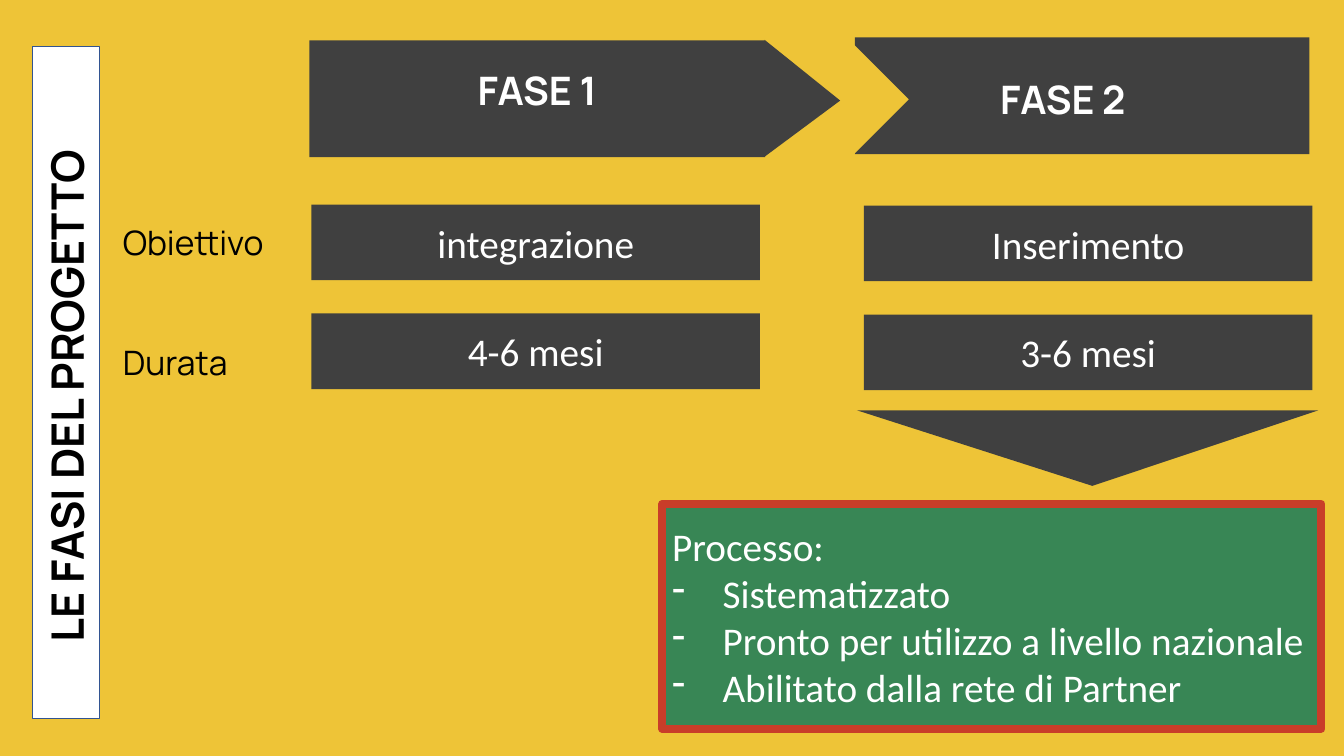
from dataclasses import dataclass

from lxml import etree
from pptx import Presentation
from pptx import util as u
from pptx.dml.color import RGBColor
from pptx.enum import shapes, text
from pptx.oxml.ns import qn

RECT = shapes.MSO_SHAPE.RECTANGLE
TRIANGLE = shapes.MSO_SHAPE.ISOSCELES_TRIANGLE
LEFT, CENTER = text.PP_ALIGN.LEFT, text.PP_ALIGN.CENTER


@dataclass(frozen=True)
class Theme:
    yellow: str = "EEC437"
    dark: str = "404040"
    white: str = "FFFFFF"
    black: str = "000000"
    blue: str = "325491"
    green: str = "388655"
    red: str = "C93D29"
    heading: str = "Manrope"
    body: str = "Calibri"
    title_size: int = 32
    text_size: int = 28
    label_size: int = 24


class Board:
    """Draws on one slide with a grid of 80 columns by 45 rows."""

    def __init__(self, prs, theme):
        self.theme = theme
        self.slide = prs.slides.add_slide(prs.slide_layouts[6])
        self.col, self.row = prs.slide_width / 80, prs.slide_height / 45
        fill = self.slide.background.fill
        fill.solid()
        fill.fore_color.rgb = RGBColor.from_string(theme.yellow)

    def place(self, x, y, w, h):
        return (u.Emu(round(x * self.col)), u.Emu(round(y * self.row)),
                u.Emu(round(w * self.col)), u.Emu(round(h * self.row)))

    def shape(self, kind, box, fill, line=None, width=1, rotation=0):
        sp = self.slide.shapes.add_shape(kind, *self.place(*box))
        sp.shadow.inherit = False
        sp.rotation = rotation
        sp.fill.solid()
        sp.fill.fore_color.rgb = RGBColor.from_string(fill)
        if line:
            sp.line.color.rgb = RGBColor.from_string(line)
            sp.line.width = u.Pt(width)
        else:
            sp.line.fill.background()
        return sp

    def triangle(self, box, fill, rotation, tip=0.5):
        sp = self.shape(TRIANGLE, box, fill, rotation=rotation)
        sp.adjustments[0] = tip

    def set_text(self, tf, words, size, font, color, bold=False, align=LEFT):
        tf.text = words
        for p in tf.paragraphs:
            p.alignment = align
            for r in p.runs:
                r.font.size, r.font.name, r.font.bold = u.Pt(size), font, bold
                r.font.color.rgb = RGBColor.from_string(color)

    def panel(self, box, words, fill, align=CENTER, **outline):
        t = self.theme
        tf = self.shape(RECT, box, fill, **outline).text_frame
        tf.word_wrap = True
        tf.vertical_anchor = text.MSO_ANCHOR.MIDDLE
        self.set_text(tf, words, t.text_size, t.body, t.white, align=align)
        return tf

    def label(self, box, words, size, color, bold=False, align=LEFT, rotation=0):
        sp = self.slide.shapes.add_textbox(*self.place(*box))
        sp.rotation = rotation
        tf = sp.text_frame
        tf.word_wrap = False
        tf.auto_size = text.MSO_AUTO_SIZE.SHAPE_TO_FIT_TEXT
        self.set_text(tf, words, size, self.theme.heading, color, bold, align)

    def dash(self, p):
        pPr = p._p.get_or_add_pPr()
        indent = u.Inches(0.5)
        pPr.set("marL", str(indent))
        pPr.set("indent", str(-indent))
        etree.SubElement(pPr, qn("a:buChar")).set("char", "-")


def main():
    prs = Presentation()
    prs.slide_width, prs.slide_height = u.Inches(13.33), u.Inches(7.5)
    t = Theme()
    board = Board(prs, t)

    # Vertical title
    board.shape(RECT, (1.92, 2.76, 4.02, 40.02), t.white, line=t.blue)
    board.label((-11.88, 21.06, 31.68, 3.84), "LE FASI DEL PROGETTO",
                t.title_size, t.black, bold=True, rotation=270)

    # Phase headers: one with an arrow tip, one with a notch
    board.shape(RECT, (18.42, 2.4, 27.12, 6.96), t.dark)
    board.triangle((44.28, 3.6, 6.96, 4.5), t.dark, 90, tip=0.52)
    board.shape(RECT, (50.88, 2.22, 27.06, 6.96), t.dark)
    board.triangle((48.06, 3.9, 8.04, 4.02), t.yellow, 90)
    for box, name in (((27.6, 3.66, 8.76, 3.42), "FASE 1"),
                      ((58.8, 4.2, 8.94, 3.42), "FASE 2")):
        board.label(box, name, t.text_size, t.white, bold=True, align=CENTER)

    # Goal and duration of each phase
    phases = ((18.54, 12.18, ("integrazione", "4-6 mesi")),
              (51.42, 12.24, ("Inserimento", "3-6 mesi")))
    for x, top, values in phases:
        for i, value in enumerate(values):
            board.panel((x, top + 6.48 * i, 26.7, 4.5), value, t.dark)
    for y, w, name in ((12.9, 9.66, "Obiettivo"), (20.04, 7.44, "Durata")):
        board.label((6.72, y, w, 3), name, t.label_size, t.black)

    # Resulting process
    board.triangle((51, 24.42, 27.48, 4.5), t.dark, 180, tip=0.49)
    lines = ("Processo:", "Sistematizzato",
             "Pronto per utilizzo a livello nazionale",
             "Abilitato dalla rete di Partner")
    tf = board.panel((39.42, 30, 39.24, 13.38), "\n".join(lines), t.green,
                     align=LEFT, line=t.red, width=5.75)
    for p in tf.paragraphs[1:]:
        board.dash(p)

    prs.save("out.pptx")


if __name__ == "__main__":
    main()
